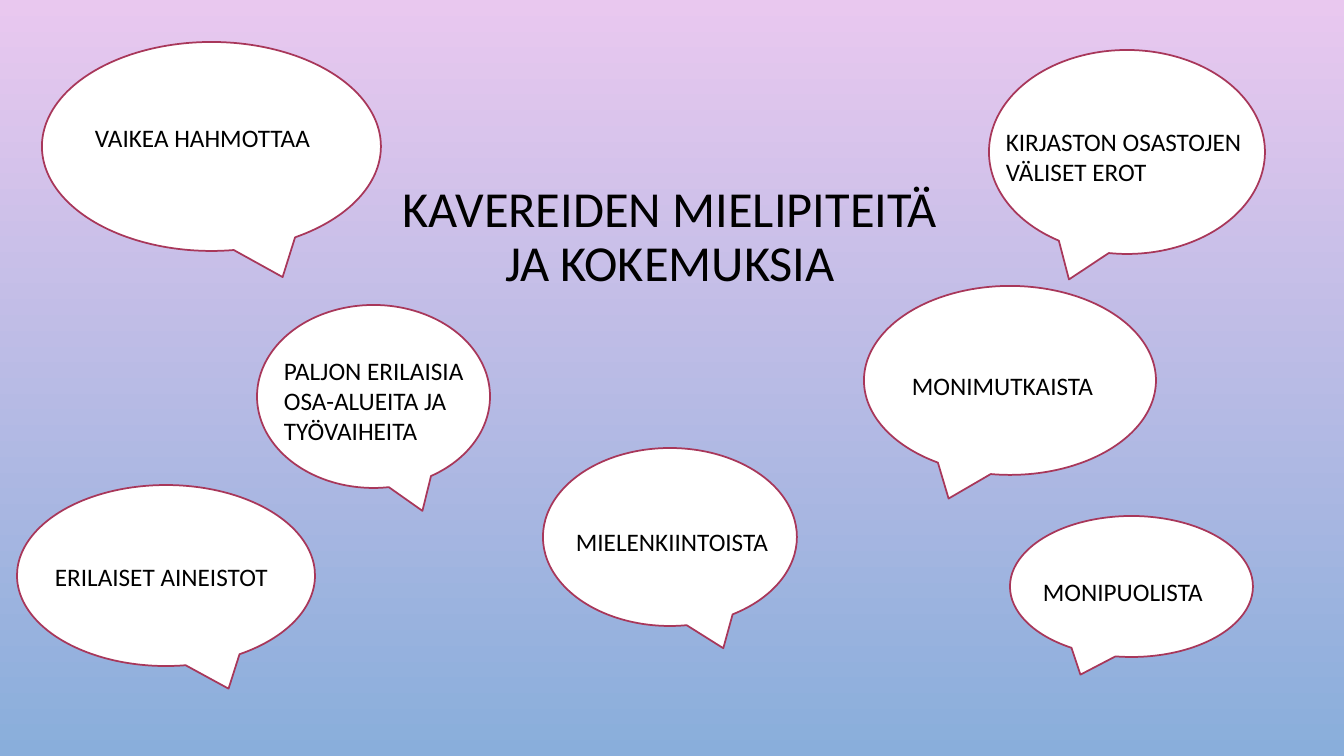
import dataclasses

import pptx
import pptx.dml.color
import pptx.enum.shapes
import pptx.enum.text
import pptx.util

PX = 12192000 // 1344  # EMU in one px


@dataclasses.dataclass(frozen=True)
class Theme:
    font: str = "Calibri"
    text: str = "000000"
    bubble: str = "FFFFFF"
    outline: str = "A8375A"
    sky_top: str = "E9C8EF"
    sky_bottom: str = "89AEDB"
    title_size: int = 36
    label_size: int = 18
    outline_width: float = 1.25


THEME = Theme()
LABEL_WIDTH, LINE_HEIGHT, LABEL_PADDING = 302, 30, 10
LEFT, RIGHT = -0.21, 0.21  # side the bubble's tail points to

# Bubble box, tail side, label offset inside the bubble, label lines, label
OPINIONS = [
    ((543, 448, 254, 178), RIGHT, (23, 73), 1, "MIELENKIINTOISTA"),
    ((42, 42, 339, 209), RIGHT, (43, 75), 1, "VAIKEA HAHMOTTAA"),
    ((864, 286, 292, 189), LEFT, (38, 79), 1, "MONIMUTKAISTA"),
    ((989, 50, 276, 204), LEFT, (7, 71), 2, "KIRJASTON OSASTOJEN VÄLISET EROT"),
    ((17, 485, 298, 181), RIGHT, (28, 71), 1, "ERILAISET AINEISTOT"),
    ((257, 305, 233, 183), RIGHT, (17, 45), 3,
     "PALJON ERILAISIA\nOSA-ALUEITA JA TYÖVAIHEITA"),
    ((1010, 516, 243, 141), LEFT, (23, 55), 1, "MONIPUOLISTA"),
]


def emu(*lengths):
    return [pptx.util.Emu(length * PX) for length in lengths]


def rgb(value):
    return pptx.dml.color.RGBColor.from_string(value)


def format_runs(tf, size):
    for p in tf.paragraphs:
        for r in p.runs:
            r.font.name = THEME.font
            r.font.size = pptx.util.Pt(size)
            r.font.color.rgb = rgb(THEME.text)


def paint_background(s):
    fill = s.background.fill
    fill.gradient()
    fill.gradient_angle = 270
    for stop, color in zip(fill.gradient_stops, (THEME.sky_top, THEME.sky_bottom)):
        stop.color.rgb = rgb(color)


def place_title(s, box, text):
    sp = s.shapes.title
    sp.left, sp.top, sp.width, sp.height = emu(*box)
    tf = sp.text_frame
    tf.text = text
    tf.word_wrap = True
    tf.auto_size = pptx.enum.text.MSO_AUTO_SIZE.NONE
    tf.vertical_anchor = pptx.enum.text.MSO_ANCHOR.MIDDLE
    p = tf.paragraphs[0]
    p.alignment = pptx.enum.text.PP_ALIGN.CENTER
    p.line_spacing = 0.9
    format_runs(tf, THEME.title_size)


def add_opinion(s, box, tail, offset, lines, text):
    # Bubble
    sp = s.shapes.add_shape(
        pptx.enum.shapes.MSO_SHAPE.OVAL_CALLOUT, *emu(*box))
    sp.adjustments[0] = tail
    sp.shadow.inherit = False
    sp.fill.solid()
    sp.fill.fore_color.rgb = rgb(THEME.bubble)
    sp.line.color.rgb = rgb(THEME.outline)
    sp.line.width = pptx.util.Pt(THEME.outline_width)

    # Label
    x, y = box[0] + offset[0], box[1] + offset[1]
    height = LABEL_PADDING + lines * LINE_HEIGHT
    tf = s.shapes.add_textbox(*emu(x, y, LABEL_WIDTH, height)).text_frame
    tf.text = text
    tf.word_wrap = True
    tf.auto_size = pptx.enum.text.MSO_AUTO_SIZE.SHAPE_TO_FIT_TEXT
    format_runs(tf, THEME.label_size)


def main():
    prs = pptx.Presentation()
    prs.slide_width, prs.slide_height = emu(1344, 756)
    s = prs.slides.add_slide(prs.slide_layouts.get_by_name("Title Only"))
    paint_background(s)
    place_title(s, (99, 150, 1142, 176), "KAVEREIDEN MIELIPITEITÄ\vJA KOKEMUKSIA")
    for opinion in OPINIONS:
        add_opinion(s, *opinion)
    prs.save("out.pptx")


if __name__ == "__main__":
    main()
